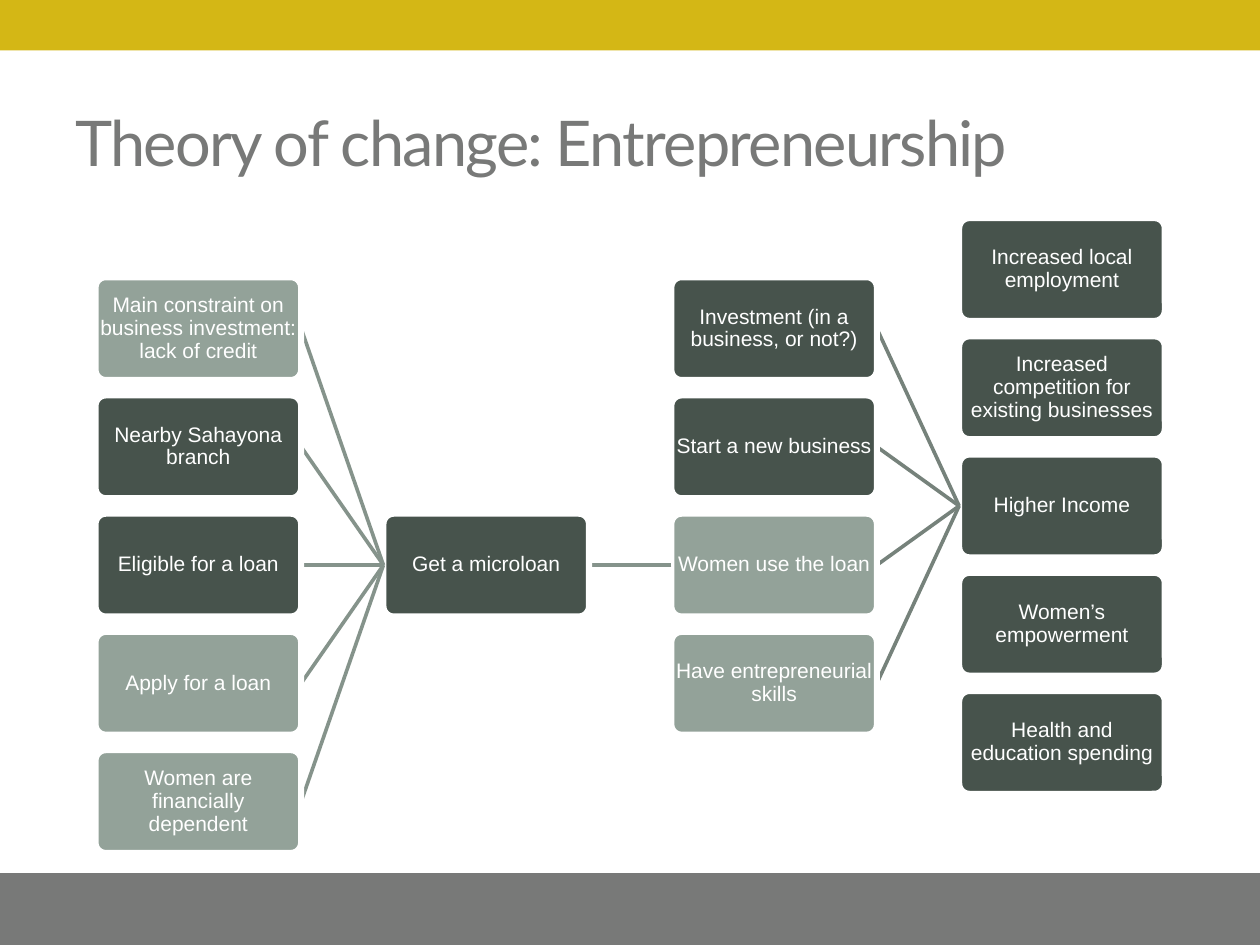
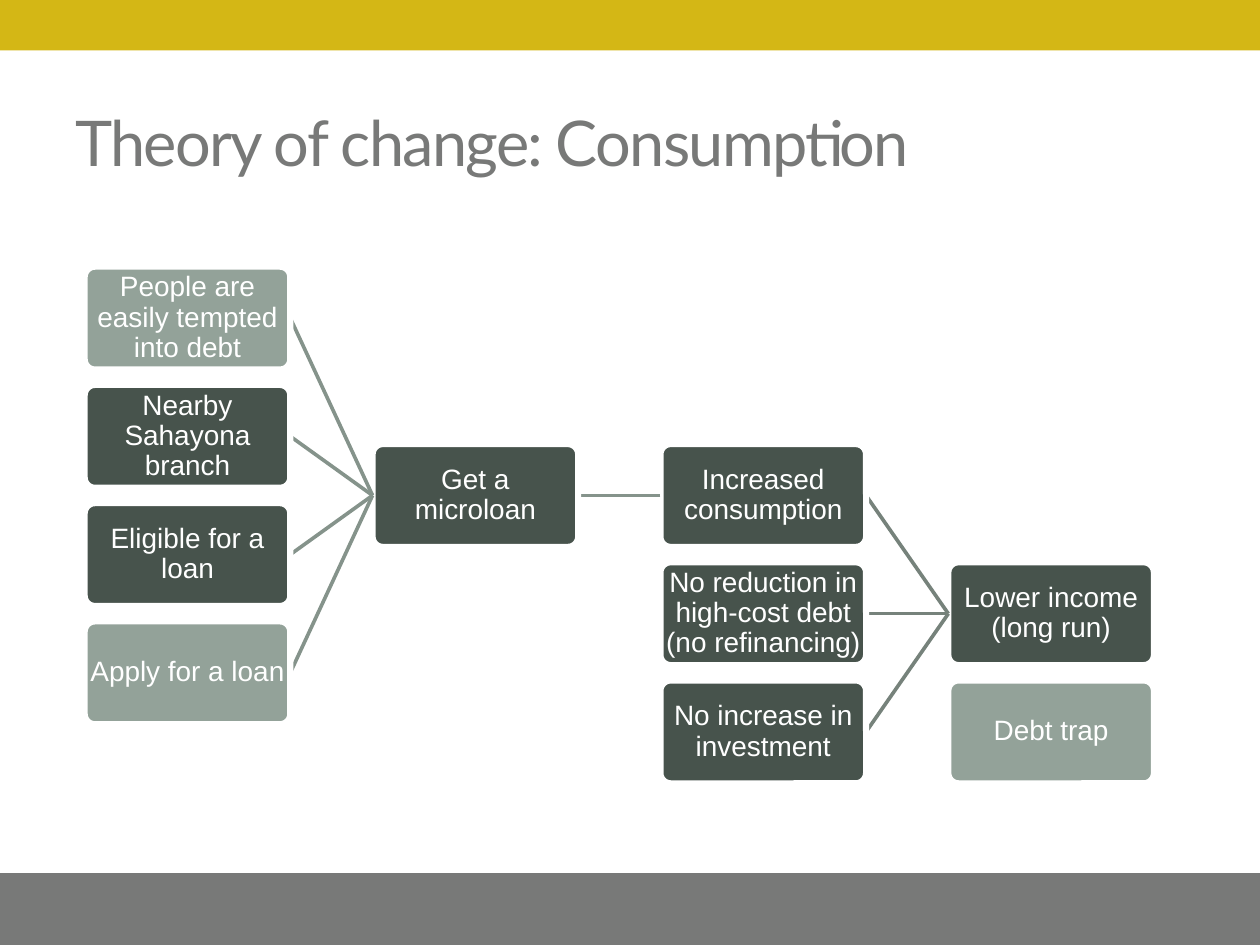
from lxml.etree import SubElement
from pptx import Presentation
from pptx.dml.color import RGBColor
from pptx.enum.shapes import MSO_CONNECTOR, MSO_SHAPE
from pptx.enum.text import MSO_ANCHOR, PP_ALIGN
from pptx.oxml.ns import qn
from pptx.util import Pt

GOLD = RGBColor(0xD4, 0xB7, 0x15)
GRAY = RGBColor(0x78, 0x79, 0x78)
DARK = RGBColor(0x47, 0x53, 0x4C)
LIGHT = RGBColor(0x93, 0xA2, 0x99)
WHITE = RGBColor(0xFF, 0xFF, 0xFF)
EARLY = RGBColor(0x85, 0x93, 0x8B)
LATE = RGBColor(0x76, 0x82, 0x7B)

# Box size and grid steps, in points
WIDE, HIGH = 117.5, 58.75
STEP_X, STEP_Y = 1.4 * WIDE, 1.15 * HIGH

# Each column: first row, index of the box its links lead from, boxes
SLIDES = [
    dict(title="Theory of change: Entrepreneurship", left=54.6, top=158.4, size=12, columns=[
        (0, 0, [("Main constraint on business investment: lack of credit", LIGHT),
                ("Nearby Sahayona branch", DARK),
                ("Eligible for a loan", DARK),
                ("Apply for a loan", LIGHT),
                ("Women are financially dependent", LIGHT)]),
        (2, 0, [("Get a microloan", DARK)]),
        (0, 2, [("Investment (in a business, or not?)", DARK),
                ("Start a new business", DARK),
                ("Women use the loan", LIGHT),
                ("Have entrepreneurial skills", LIGHT)]),
        (-0.5, 2, [("Increased local employment", DARK),
                   ("Increased competition for existing businesses", DARK),
                   ("Higher Income", DARK),
                   ("Women’s empowerment", DARK),
                   ("Health and education spending", DARK)]),
    ]),
    dict(title="Theory of change: Consumption", left=48.4, top=152.4, size=16, columns=[
        (0, 0, [("People are easily tempted into debt", LIGHT),
                ("Nearby Sahayona branch", DARK),
                ("Eligible for a loan", DARK),
                ("Apply for a loan", LIGHT)]),
        (1.5, 0, [("Get a microloan", DARK)]),
        (1.5, 0, [("Increased consumption", DARK),
                  ("No reduction in high-cost debt (no refinancing)", DARK),
                  ("No increase in investment", DARK)]),
        (2.5, 0, [("Lower income (long run)", DARK),
                  ("Debt trap", LIGHT)]),
    ]),
]


def write(shape, text, font="Arial", size=12, color=WHITE, align=PP_ALIGN.CENTER,
          inset=None, leading=None, spacing=None):
    frame = shape.text_frame
    frame.word_wrap = True
    frame.vertical_anchor = MSO_ANCHOR.MIDDLE
    if inset is not None:
        frame.margin_left = frame.margin_right = Pt(inset)
        frame.margin_top = frame.margin_bottom = Pt(inset)
    para = frame.paragraphs[0]
    para.alignment = align
    para.line_spacing = leading
    run = para.add_run()
    run.text = text
    run.font.name = font
    run.font.size = Pt(size)
    run.font.color.rgb = color
    if spacing is not None:
        for props in shape.element.iter(qn("a:rPr")):
            props.set("spc", str(round(spacing * 100)))


def block(slide, kind, x, y, w, h, fill):
    shape = slide.shapes.add_shape(kind, Pt(x), Pt(y), Pt(w), Pt(h))
    shape.shadow.inherit = False
    shape.fill.solid()
    shape.fill.fore_color.rgb = fill
    shape.line.fill.background()
    return shape


deck = Presentation()
deck.slide_width, deck.slide_height = Pt(720), Pt(540)

for data in SLIDES:
    slide = deck.slides.add_slide(deck.slide_layouts[6])

    # Bands and title
    block(slide, MSO_SHAPE.RECTANGLE, 0, 0, 720, 28.8, GOLD)
    block(slide, MSO_SHAPE.RECTANGLE, 0, 499, 720, 41, GRAY)
    title = slide.shapes.add_textbox(Pt(36), Pt(42), Pt(648), Pt(78))
    write(title, data["title"], font="Lato", size=36, color=GRAY,
          align=PP_ALIGN.LEFT, spacing=-1)

    # Columns from right to left, each linked to the hub on its right
    hub = None
    for col, (row, pick, items) in reversed(list(enumerate(data["columns"]))):
        boxes = []
        for i, (text, fill) in enumerate(items):
            # The link from a single box leads to one hub only
            box = block(slide, MSO_SHAPE.ROUNDED_RECTANGLE,
                        data["left"] + col * STEP_X,
                        data["top"] + (row + i) * STEP_Y, WIDE, HIGH, fill)
            box.adjustments[0] = 0.1
            box.line.color.rgb = WHITE
            box.line.width = Pt(3.5)
            write(box, text, size=data["size"], inset=0.9, leading=0.9)
            boxes.append(box)
            if hub is None:
                continue
            link = slide.shapes.add_connector(MSO_CONNECTOR.STRAIGHT, 0, 0, 0, 0)
            link.begin_connect(hub, 1)
            link.end_connect(box, 3)
            link.line.color.rgb = LATE if col == 2 else EARLY
            link.line.width = Pt(2.08)
            SubElement(link.element.find(qn("p:spPr")), qn("a:effectLst"))
            # The white box border covers the end of its link
            box.element.addprevious(link.element)
        hub = boxes[pick]

deck.save("out.pptx")
